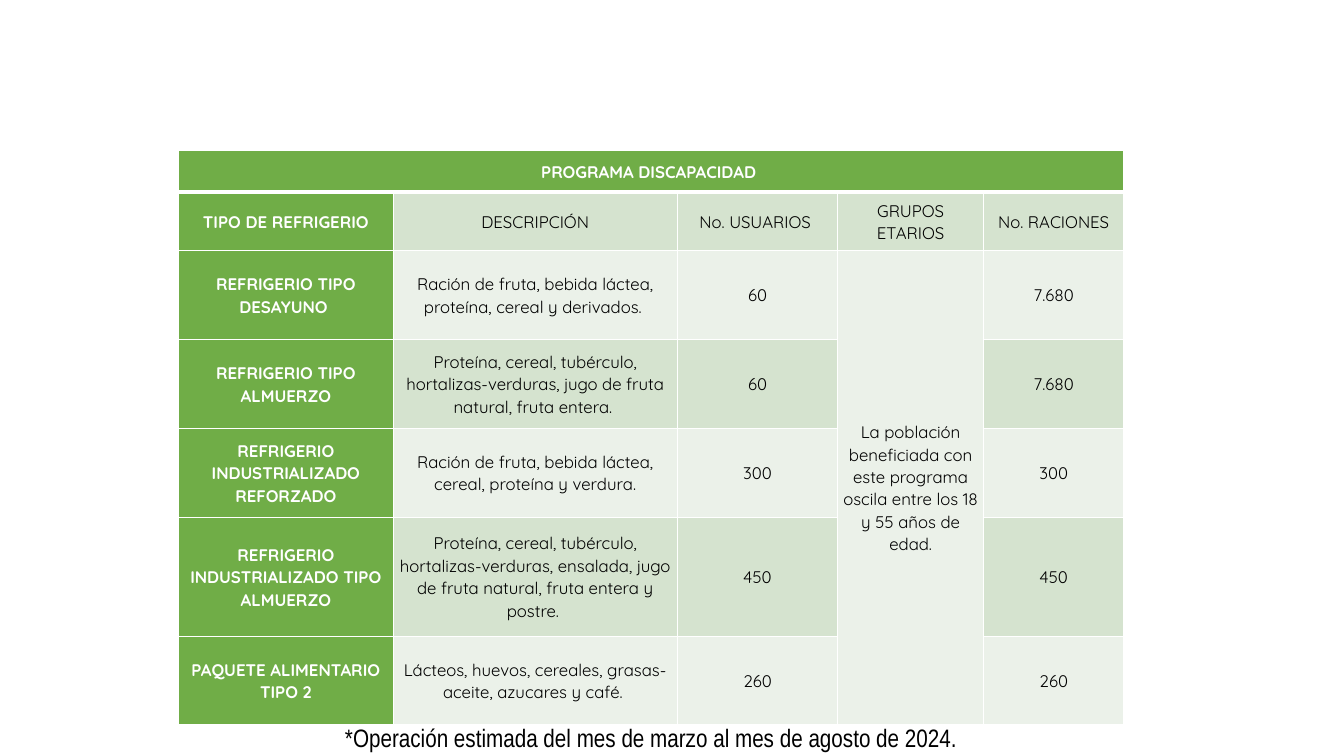
from lxml import etree
from pptx import Presentation
from pptx.dml.color import RGBColor
from pptx.enum.text import MSO_ANCHOR, MSO_AUTO_SIZE, PP_ALIGN
from pptx.oxml.ns import qn
from pptx.util import Cm, Pt

CENTER = PP_ALIGN.CENTER
MIDDLE = MSO_ANCHOR.MIDDLE
GROW = MSO_AUTO_SIZE.SHAPE_TO_FIT_TEXT

COLORS = {"green": "70AD47", "band": "D5E3CF", "light": "EBF1E9",
          "white": "FFFFFF", "black": "000000"}
COL_WIDTHS = [5.41, 7.16, 4.04, 3.68, 3.53]
ROW_HEIGHTS = [1.04, 1.47, 2.24, 2.24, 2.24, 3, 2.24]
AGE_COL = 3
ROWS = [
    ["PROGRAMA DISCAPACIDAD ", "", "", "", ""],
    ["TIPO DE REFRIGERIO", "DESCRIPCIÓN", "No. USUARIOS ", "GRUPOS ETARIOS", "No. RACIONES"],
    ["REFRIGERIO TIPO DESAYUNO ",
     "Ración de fruta, bebida láctea, proteína, cereal y derivados. ", "60",
     "La población beneficiada con este programa oscila entre los 18 y 55 años de edad.",
     "7.680"],
    ["REFRIGERIO TIPO ALMUERZO",
     "Proteína, cereal, tubérculo, hortalizas-verduras, jugo de fruta natural, fruta entera. ",
     "60", "", "7.680"],
    ["REFRIGERIO INDUSTRIALIZADO REFORZADO",
     "Ración de fruta, bebida láctea, cereal, proteína y verdura.", "300", "", "300"],
    ["REFRIGERIO INDUSTRIALIZADO TIPO ALMUERZO",
     "Proteína, cereal, tubérculo, hortalizas-verduras, ensalada, jugo de fruta natural, "
     "fruta entera y postre. ", "450", "", "450"],
    ["PAQUETE ALIMENTARIO TIPO 2",
     "Lácteos, huevos, cereales, grasas-aceite, azucares y café. ", "260", "", "260"],
]


def rgb(name):
    """Return the named colour."""
    return RGBColor.from_string(COLORS[name])


def format_text(tf, font, size, color, spacing, bold=False):
    """Centre the first paragraph of a text frame and format its runs."""
    p = tf.paragraphs[0]
    p.alignment = CENTER
    p.line_spacing = spacing
    for r in p.runs:
        r.font.name = font
        r.font.size = Pt(size)
        r.font.bold = bold
        r.font.color.rgb = rgb(color)


def add_borders(cell, row):
    """Draw white cell borders, with a thick rule below the title row."""
    tcPr = cell._tc.get_or_add_tcPr()
    widths = {"L": 1, "R": 1, "T": 3 if row == 1 else 1, "B": 3 if row == 0 else 1}
    for side, width in widths.items():
        ln = etree.SubElement(tcPr, qn(f"a:ln{side}"), w=str(Pt(width)))
        fill = etree.SubElement(ln, qn("a:solidFill"))
        etree.SubElement(fill, qn("a:srgbClr"), val=COLORS["white"])


def style_cell(cell, text, row, col):
    """Fill, border and write one cell according to its place."""
    header = row == 0 or col == 0
    band = "light" if col == AGE_COL and row > 1 or row % 2 == 0 else "band"
    add_borders(cell, row)
    cell.fill.solid()
    cell.fill.fore_color.rgb = rgb("green" if header else band)
    cell.vertical_anchor = MIDDLE
    cell.margin_left = cell.margin_right = Cm(0.13)
    cell.margin_top = cell.margin_bottom = 0
    cell.text_frame.text = text
    format_text(cell.text_frame, "Quicksand", 12, "white" if header else "black", 1.07, header)


def add_program_table(s, x, y):
    """Place the programme table with its top left corner at x, y."""
    table = s.shapes.add_table(len(ROWS), len(COL_WIDTHS), Cm(x), Cm(y),
                               Cm(sum(COL_WIDTHS)), Cm(sum(ROW_HEIGHTS))).table
    for column, width in zip(table.columns, COL_WIDTHS):
        column.width = Cm(width)
    for i, (height, texts) in enumerate(zip(ROW_HEIGHTS, ROWS)):
        table.rows[i].height = Cm(height)
        for j, text in enumerate(texts):
            style_cell(table.cell(i, j), text, i, j)
    table.cell(0, 0).merge(table.cell(0, len(COL_WIDTHS) - 1))
    table.cell(2, AGE_COL).merge(table.cell(len(ROWS) - 1, AGE_COL))


def add_note(s, x, y, w, h):
    """Place the footnote in the given box."""
    tf = s.shapes.add_textbox(Cm(x), Cm(y), Cm(w), Cm(h)).text_frame
    tf.word_wrap = True
    tf.auto_size = GROW
    tf.text = "*Operación estimada del mes de marzo al mes de agosto de 2024."
    format_text(tf, "Arial Narrow", 18, "black", 1.15)


def main():
    """Build and save the slide."""
    prs = Presentation()
    prs.slide_width, prs.slide_height = Cm(33.87), Cm(19.05)
    s = prs.slides.add_slide(prs.slide_layouts[6])
    add_program_table(s, 4.5, 3.8)
    add_note(s, 7.95, 17.96, 16.92, 1.09)
    prs.save("out.pptx")


if __name__ == "__main__":
    main()
